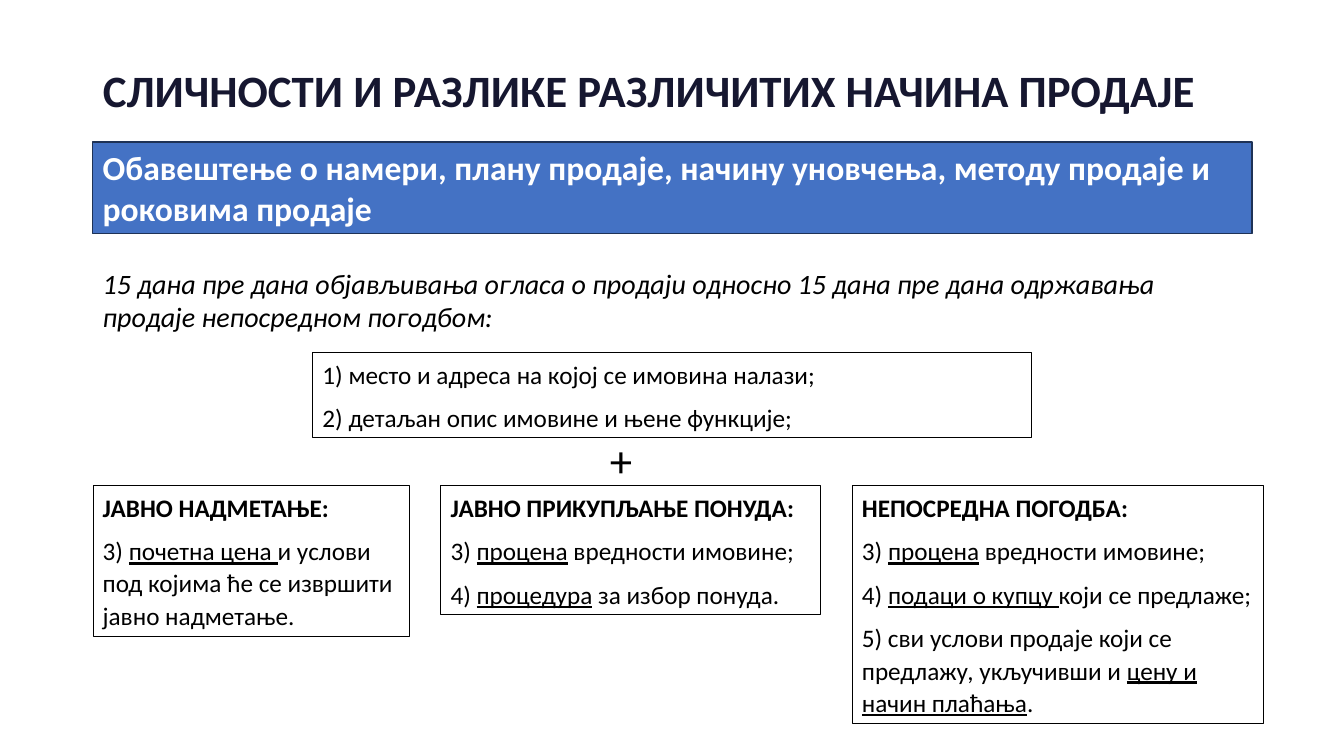
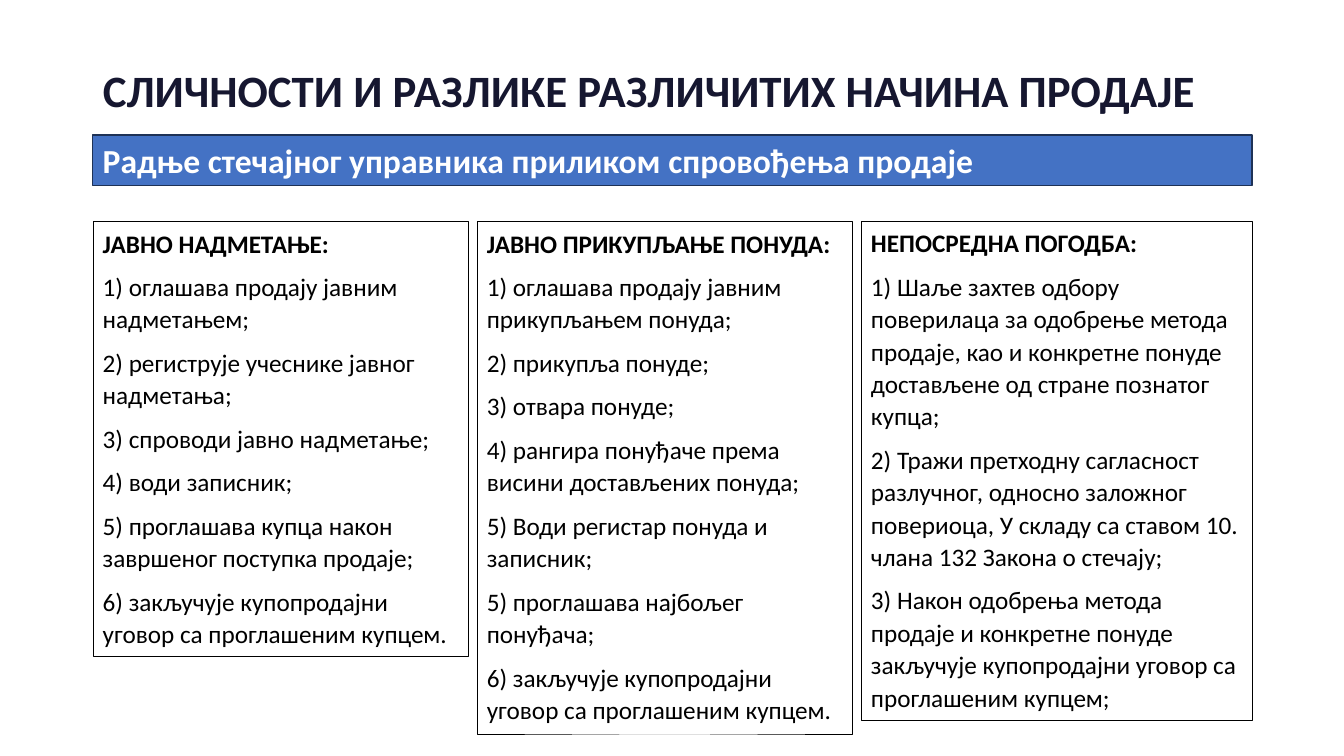
import pptx
import pptx.util
from pptx.dml.color import RGBColor
from pptx.enum.shapes import MSO_SHAPE
from pptx.enum.text import MSO_ANCHOR, MSO_AUTO_SIZE, PP_ALIGN

# Shared look; 100 px to the inch
PX = 9144
FONT = "Calibri"
NAVY = RGBColor(0x16, 0x17, 0x30)
BLUE = RGBColor(0x44, 0x72, 0xC4)
BLUE_EDGE = RGBColor(0x1E, 0x32, 0x56)
WHITE = RGBColor(0xFF, 0xFF, 0xFF)
BLACK = RGBColor(0, 0, 0)
LEFT, WIDTH = 92, 1150
BODY = dict(size=18, line=1.07, after=8)

# Content; underscores enclose underlined words
TITLE = "СЛИЧНОСТИ И РАЗЛИКЕ РАЗЛИЧИТИХ НАЧИНА ПРОДАЈЕ"
METHODS = ["ЈАВНО НАДМЕТАЊЕ:", "ЈАВНО ПРИКУПЉАЊЕ ПОНУДА:", "НЕПОСРЕДНА ПОГОДБА:"]
DEADLINE = ("15 дана пре дана објављивања огласа о продаји односно 15 дана "
            "пре дана одржавања продаје непосредном погодбом:")
COMMON_ITEMS = ["1) место и адреса на којој се имовина налази;",
                "2) детаљан опис имовине и њене функције;"]
NOTICE = {
    "band": "Обавештење о намери, плану продаје, начину уновчења, методу продаје и роковима продаје",
    "band_top": 141, "band_height": 91,
    "top": 481, "gap": 31, "widths": [314, 377, 408], "heights": [150, 128, 237],
    "items": [
        ["3) _почетна цена _и услови под којима ће се извршити јавно надметање."],
        ["3) _процена_ вредности имовине;",
         "4) _процедура_ за избор понуда."],
        ["3) _процена_ вредности имовине;",
         "4) _подаци о купцу _који се предлаже;",
         "5) сви услови продаје који се предлажу, укључивши и _цену и начин плаћања_."],
    ],
}
ACTIONS = {
    "band": "Радње стечајног управника приликом спровођења продаје",
    "band_top": 134, "band_height": 50,
    "top": 219, "gap": 9, "widths": [372, 372, 388], "heights": [432, 509, 496],
    "items": [
        ["1) оглашава продају јавним надметањем;",
         "2) региструје учеснике јавног надметања;",
         "3) спроводи јавно надметање;",
         "4) води записник;",
         "5) проглашава купца након завршеног поступка продаје;",
         "6) закључује купопродајни уговор са проглашеним купцем."],
        ["1) оглашава продају јавним прикупљањем понуда;",
         "2) прикупља понуде;",
         "3) отвара понуде;",
         "4) рангира понуђаче према висини достављених понуда;",
         "5) Води регистар понуда и записник;",
         "5) проглашава најбољег понуђача;",
         "6) закључује купопродајни уговор са проглашеним купцем."],
        ["1) Шаље захтев одбору поверилаца за одобрење метода продаје, као и "
         "конкретне понуде достављене од стране познатог купца;",
         "2) Тражи претходну сагласност разлучног, односно заложног повериоца, "
         "У складу са ставом 10. члана 132 Закона о стечају;",
         "3) Након одобрења метода продаје и конкретне понуде закључује "
         "купопродајни уговор са проглашеним купцем;"],
    ],
}


def place(left, top, width, height):
    return [value * PX for value in (left, top, width, height)]


def write(box, lines, size, color=BLACK, bold_lines=0, italic=False,
          line=1.0, after=0, anchor=MSO_ANCHOR.TOP):
    frame = box.text_frame
    frame.word_wrap = True
    frame.auto_size = MSO_AUTO_SIZE.SHAPE_TO_FIT_TEXT
    frame.vertical_anchor = anchor
    frame.text = "\n".join(lines)
    for row, (para, text) in enumerate(zip(frame.paragraphs, lines)):
        para.alignment = PP_ALIGN.LEFT
        para.line_spacing = line
        para.space_after = pptx.util.Pt(after)
        para.text = ""
        for part, words in enumerate(text.split("_")):
            span = para.add_run()
            span.text = words
            span.font.name = FONT
            span.font.size = pptx.util.Pt(size)
            span.font.color.rgb = color
            span.font.bold = row < bold_lines
            span.font.italic = italic
            span.font.underline = part % 2 == 1


def add_frame(page, area, edge=BLACK, weight=0.25, fill=None):
    box = page.shapes.add_shape(MSO_SHAPE.RECTANGLE, *place(*area))
    box.shadow.inherit = False
    box.line.color.rgb = edge
    box.line.width = pptx.util.Pt(weight)
    if fill is None:
        box.fill.background()
    else:
        box.fill.solid()
        box.fill.fore_color.rgb = fill
    return box


def add_page(deck, content):
    page = deck.slides.add_slide(deck.slide_layouts[5])
    # Title
    title = page.shapes.title
    title.left, title.top, title.width, title.height = place(LEFT, 62, WIDTH, 59)
    write(title, [TITLE], 32, NAVY, bold_lines=1, line=0.9, anchor=MSO_ANCHOR.BOTTOM)
    # Subject band
    area = (LEFT, content["band_top"], WIDTH, content["band_height"])
    band = add_frame(page, area, BLUE_EDGE, 1, BLUE)
    write(band, [content["band"]], 24, WHITE, bold_lines=1)
    # One column for each method of sale
    left = LEFT
    for method, items, width, height in zip(
            METHODS, content["items"], content["widths"], content["heights"]):
        column = add_frame(page, (left, content["top"], width, height))
        write(column, [method] + items, bold_lines=1, **BODY)
        left += width + content["gap"]
    return page


def main():
    deck = pptx.Presentation()
    deck.slide_width, deck.slide_height = 1333 * PX, 750 * PX

    notice = add_page(deck, NOTICE)
    # Deadline and the items common to all methods
    deadline = notice.shapes.add_textbox(*place(LEFT, 259, WIDTH, 77))
    write(deadline, [DEADLINE], 20, italic=True)
    write(add_frame(notice, (310, 349, 713, 85)), COMMON_ITEMS, **BODY)
    plus = notice.shapes.add_textbox(*place(595, 421, 37, 65))
    write(plus, ["+"], 32, line=1.07, after=8)

    add_page(deck, ACTIONS)
    deck.save("out.pptx")


if __name__ == "__main__":
    main()
